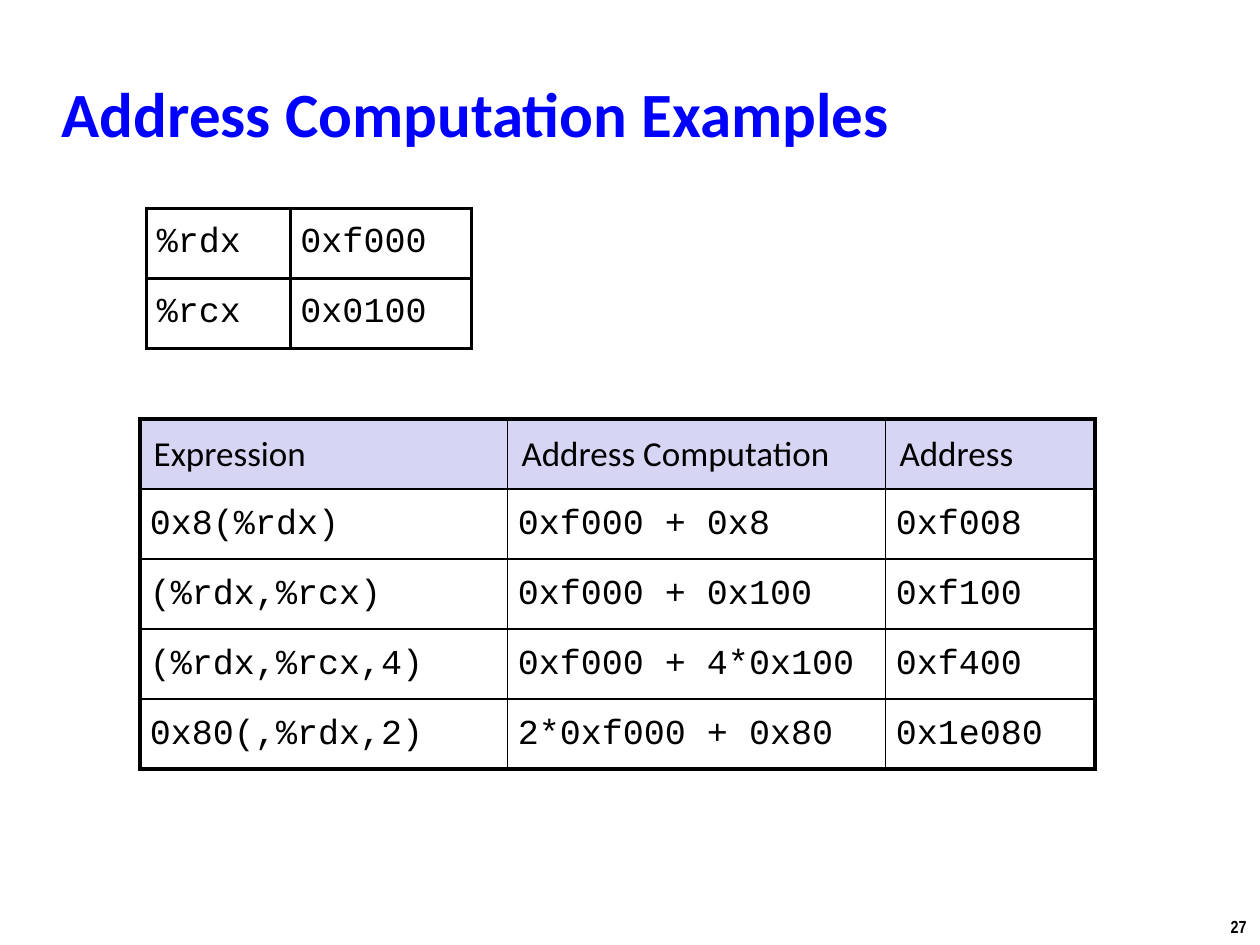
from lxml import etree
from pptx import Presentation
from pptx.dml.color import RGBColor
from pptx.enum.text import MSO_ANCHOR, MSO_AUTO_SIZE, PP_ALIGN
from pptx.oxml.ns import qn
from pptx.util import Inches, Pt

MIDDLE, TOP = MSO_ANCHOR.MIDDLE, MSO_ANCHOR.TOP
LEFT, CENTER = PP_ALIGN.LEFT, PP_ALIGN.CENTER
NO_FIT = MSO_AUTO_SIZE.NONE

BLACK = RGBColor(0x00, 0x00, 0x00)
WHITE = RGBColor(0xFF, 0xFF, 0xFF)
BLUE = RGBColor(0x00, 0x00, 0xFF)
LILAC = RGBColor(0xD6, 0xD6, 0xF4)

BODY, CODE, SMALL = "Calibri", "Courier New", "Arial Narrow"
WIDE, HIGH = Inches(10), Inches(7.5)

REGS = [["%rdx", "0xf000"], ["%rcx", "0x0100"]]
SUMS = [
    ["Expression", "Address Computation", "Address"],
    ["0x8(%rdx)", "0xf000 + 0x8", "0xf008"],
    ["(%rdx,%rcx)", "0xf000 + 0x100", "0xf100"],
    ["(%rdx,%rcx,4)", "0xf000 + 4*0x100", "0xf400"],
    ["0x80(,%rdx,2)", "2*0xf000 + 0x80", "0x1e080"],
]
# The same expressions with the answers still open
TASKS = SUMS[:1] + [[row[0], "", ""] for row in SUMS[1:]]


def area(x, y, w, h):
    """Turn percentages of the slide into a box."""
    return [int(WIDE * x / 100), int(HIGH * y / 100),
            int(WIDE * w / 100), int(HIGH * h / 100)]


def write(frame, text, font=BODY, size=20, color=BLACK, bold=False,
          align=LEFT, space=1.0):
    para = frame.paragraphs[0]
    para.alignment, para.line_spacing = align, space
    run = para.add_run()
    run.text = text
    run.font.name, run.font.size = font, Pt(size)
    run.font.bold, run.font.color.rgb = bold, color


def rule(cell, sides):
    """Draw the cell's borders; sides maps L, R, T, B to points."""
    props = cell._tc.get_or_add_tcPr()
    for spot, (side, width) in enumerate(sides.items()):
        line = etree.Element(qn("a:ln" + side), w=str(Pt(width)))
        fill = etree.SubElement(line, qn("a:solidFill"))
        etree.SubElement(fill, qn("a:srgbClr"), val=str(BLACK))
        props.insert(spot, line)


def add_grid(slide, box, rows, shares, outer, inner, head=False, space=1.0):
    """Fill the box with a ruled table of equal rows."""
    tall, broad = len(rows), len(shares)
    grid = slide.shapes.add_table(tall, broad, *box).table
    grid.first_row, grid.horz_banding = head, False
    for col, share in zip(grid.columns, shares):
        col.width = int(box[2] * share / sum(shares))
    for r, row in enumerate(rows):
        grid.rows[r].height = box[3] // tall
        top = head and r == 0
        for c, text in enumerate(row):
            cell = grid.cell(r, c)
            cell.fill.solid()
            cell.fill.fore_color.rgb = LILAC if top else WHITE
            cell.vertical_anchor = MIDDLE
            pad = Inches(0.11 if top else 0.08)
            cell.margin_left = cell.margin_right = pad
            cell.margin_top = cell.margin_bottom = pad
            if text:
                write(cell.text_frame, text, font=BODY if top else CODE,
                      space=space)
            edges = {"L": c == 0, "R": c == broad - 1,
                     "T": r == 0, "B": r == tall - 1}
            rule(cell, {side: outer if edge else inner
                        for side, edge in edges.items()})


def add_title(slide, box, text):
    title = slide.shapes.title
    title.left, title.top, title.width, title.height = box
    frame = title.text_frame
    frame.vertical_anchor, frame.auto_size = MIDDLE, NO_FIT
    write(frame, text, size=36, color=BLUE, bold=True)


def add_page(slide, box, text):
    frame = slide.shapes.add_textbox(*box).text_frame
    frame.word_wrap, frame.vertical_anchor = False, TOP
    write(frame, text, font=SMALL, size=10, bold=True, align=CENTER)


def main():
    deck = Presentation()
    deck.slide_width, deck.slide_height = WIDE, HIGH
    slide = deck.slides.add_slide(deck.slide_layouts[5])

    # Heading and page number
    add_page(slide, area(96.6, 96.27, 3.4, 3.6), "27")
    add_title(slide, area(3.9, 6.4, 83, 11.07), "Address Computation Examples")

    # Expressions as a task, then with their answers laid over it
    for rows in (TASKS, SUMS):
        add_grid(slide, area(11.1, 44.35, 75.8, 37.04), rows, [2.92, 3, 1.66],
                 2.25, 1, head=True, space=0.95)

    # Register values
    add_grid(slide, area(11.65, 22.05, 25.8, 14.82), REGS, [1.14, 1.44], 2, 2)

    deck.save("out.pptx")


if __name__ == "__main__":
    main()
